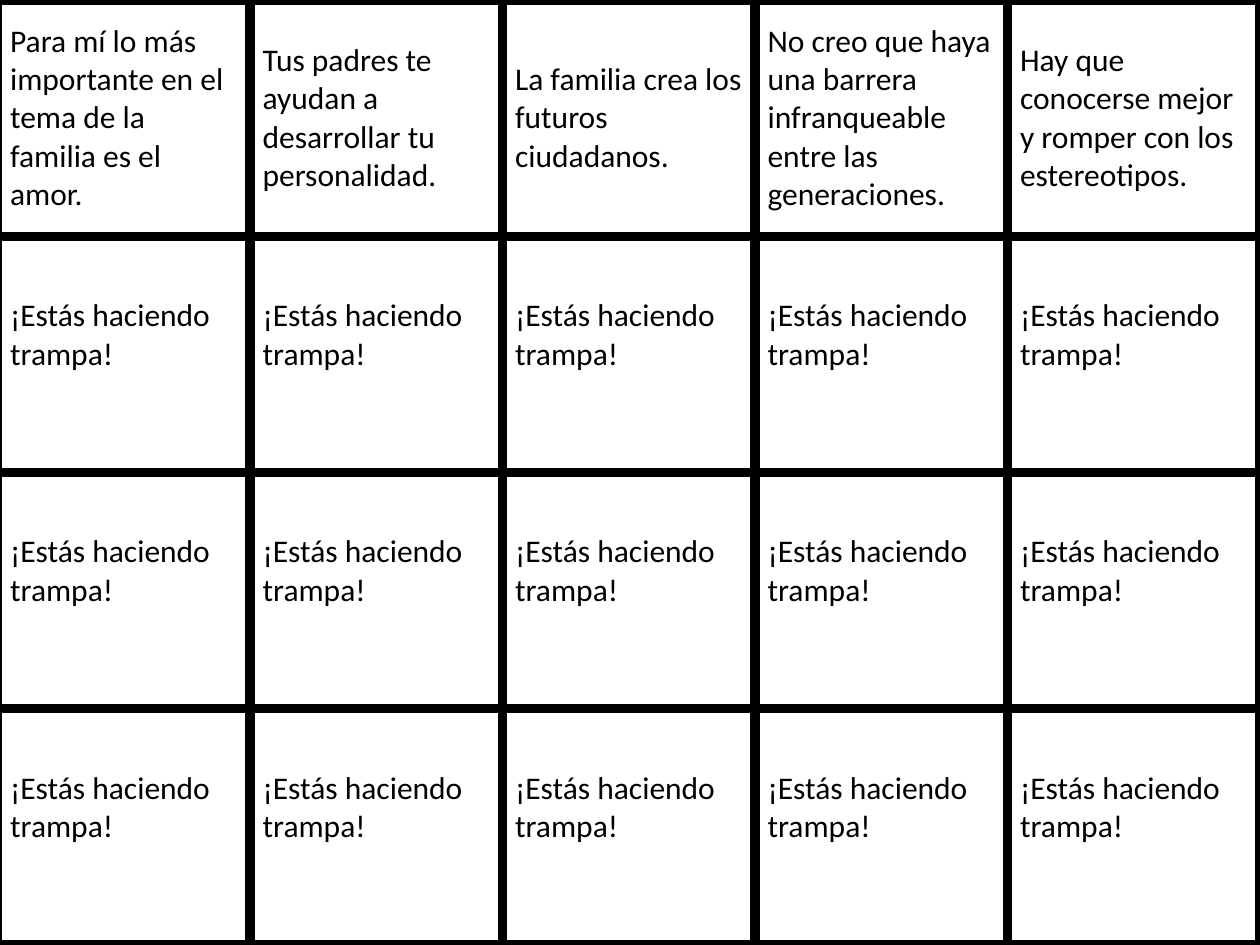
import dataclasses

import lxml.etree
import pptx
import pptx.dml.color
import pptx.enum.text
import pptx.oxml.ns
import pptx.util

Cm = pptx.util.Cm
Pt = pptx.util.Pt

OPINIONS = [
    "Para mí lo más importante en el tema de la familia es el amor.",
    "Tus padres te ayudan a desarrollar tu personalidad.",
    "La familia crea los futuros ciudadanos.",
    "No creo que haya una barrera infranqueable entre las generaciones.",
    "Hay que conocerse mejor y romper con los estereotipos.",
]
WARNING = "¡Estás haciendo trampa!"
WARNING_ROWS = 3


@dataclasses.dataclass(frozen=True)
class Theme:
    font: str = "Calibri"
    text_size: int = 18
    text_color: str = "000000"
    card_color: str = "FFFFFF"
    border_color: str = "000000"
    border_width: int = 6


class CardSheet:
    def __init__(self, slide, theme):
        self.slide = slide
        self.theme = theme

    def add_cards(self, rows, left, top, width, height):
        """Add a table whose equal cells are the cards."""
        frame = self.slide.shapes.add_table(
            len(rows), len(rows[0]), left, top, width, height
        )
        cards = frame.table
        cards.first_row = False
        cards.horz_banding = False
        for row, texts in enumerate(rows):
            for column, text in enumerate(texts):
                self.style_card(cards.cell(row, column), text)
        return cards

    def style_card(self, card, text):
        self.draw_borders(card)
        card.fill.solid()
        card.fill.fore_color.rgb = pptx.dml.color.RGBColor.from_string(
            self.theme.card_color
        )
        card.vertical_anchor = pptx.enum.text.MSO_ANCHOR.MIDDLE
        card.text = text
        font = card.text_frame.paragraphs[0].font
        font.name = self.theme.font
        font.size = Pt(self.theme.text_size)
        font.color.rgb = pptx.dml.color.RGBColor.from_string(self.theme.text_color)
        if text == WARNING:
            # Lifts the warning half a line above the middle of its card.
            card.margin_bottom = Cm(0.9)

    def draw_borders(self, card):
        qn = pptx.oxml.ns.qn
        properties = card._tc.get_or_add_tcPr()
        for side in ("lnL", "lnR", "lnT", "lnB"):
            line = lxml.etree.SubElement(
                properties, qn(f"a:{side}"), w=str(Pt(self.theme.border_width))
            )
            fill = lxml.etree.SubElement(line, qn("a:solidFill"))
            lxml.etree.SubElement(fill, qn("a:srgbClr"), val=self.theme.border_color)


def main():
    deck = pptx.Presentation()
    deck.slide_width = Cm(25.4)
    deck.slide_height = Cm(19.05)
    sheet = CardSheet(deck.slides.add_slide(deck.slide_layouts[6]), Theme())
    warnings = [[WARNING] * len(OPINIONS)] * WARNING_ROWS
    sheet.add_cards(
        [OPINIONS] + warnings, Cm(-0.05), Cm(0), Cm(25.45), deck.slide_height
    )
    deck.save("out.pptx")


if __name__ == "__main__":
    main()
